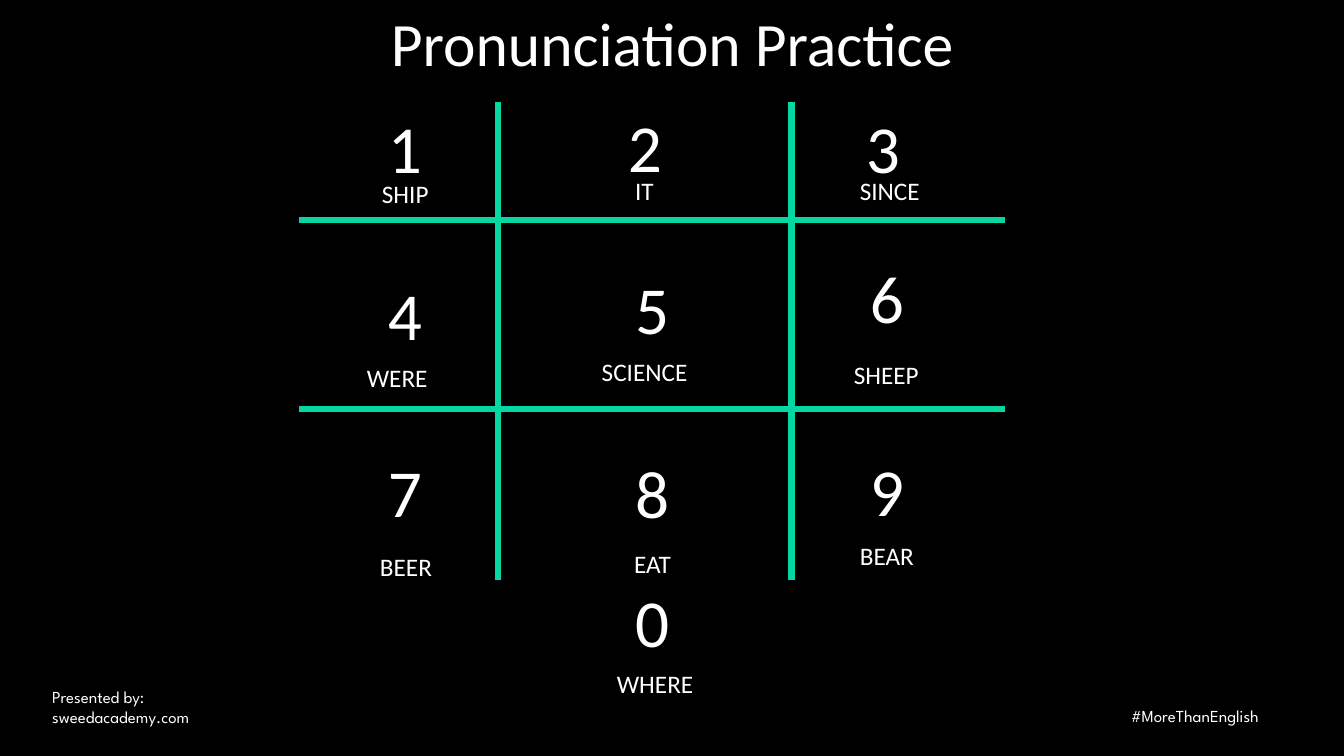
from dataclasses import dataclass

from lxml.etree import SubElement
from pptx import Presentation
from pptx.dml.color import RGBColor
from pptx.enum.shapes import MSO_CONNECTOR as Connector
from pptx.enum.text import MSO_ANCHOR as Anchor, MSO_AUTO_SIZE as AutoSize, PP_ALIGN as Align
from pptx.oxml.ns import qn
from pptx.slide import Slide
from pptx.text.text import TextFrame
from pptx.util import Inches, Pt

COLORS = {"background": "000000", "text": "FFFFFF", "grid": "05D7A2"}
BODY_FONT = "Calibri"
CREDIT_FONT = "League Spartan"
DIGIT_WIDTH, DIGIT_HEIGHT, WORD_HEIGHT = 0.54, 0.91, 0.4
GRID_LEFT, GRID_RIGHT, GRID_TOP, GRID_BOTTOM = 2.97, 9.97, 1.01, 5.75
COLUMN_BORDERS = (4.94, 7.85)
ROW_BORDERS = (2.18, 4.06)


@dataclass(frozen=True)
class Key:
    digit: str
    digit_left: float
    digit_top: float
    word: str
    word_left: float
    word_top: float
    word_width: float


@dataclass(frozen=True)
class Credit:
    text: str
    left: float
    top: float
    width: float
    height: float


KEYS = [
    Key("1", 3.75, 1.01, "SHIP", 3.69, 1.72, 0.67),
    Key("2", 6.13, 1.0, "IT", 6.2, 1.69, 0.39),
    Key("3", 8.49, 1.01, "SINCE", 8.43, 1.69, 0.8),
    Key("4", 3.75, 2.66, "WERE", 3.54, 3.55, 0.81),
    Key("5", 6.2, 2.6, "SCIENCE", 5.87, 3.49, 1.06),
    Key("6", 8.53, 2.49, "SHEEP", 8.37, 3.52, 0.85),
    Key("7", 3.75, 4.42, "BEER", 3.67, 5.42, 0.72),
    Key("8", 6.2, 4.43, "EAT", 6.19, 5.39, 0.57),
    Key("9", 8.53, 4.41, "BEAR", 8.43, 5.31, 0.74),
    Key("0", 6.2, 5.71, "WHERE", 6.02, 6.58, 0.97),
]

CREDITS = [
    Credit("Presented by:\nsweedacademy.com", 0.42, 6.76, 1.74, 0.5),
    Credit("#MoreThanEnglish", 11.12, 6.95, 1.62, 0.3),
]


def write(frame: TextFrame, text: str, *, size: float, font: str = BODY_FONT,
          color: str = COLORS["text"], align: Align = Align.LEFT,
          line_spacing: float = 1.0) -> None:
    frame.text = text
    for paragraph in frame.paragraphs:
        paragraph.alignment = align
        paragraph.line_spacing = line_spacing
        for run in paragraph.runs:
            run.font.size = Pt(size)
            run.font.name = font
            run.font.color.rgb = RGBColor.from_string(color)


def add_label(slide: Slide, text: str, left: float, top: float, width: float,
              height: float, *, size: float, font: str = BODY_FONT) -> None:
    label = slide.shapes.add_textbox(Inches(left), Inches(top), Inches(width), Inches(height))
    label.text_frame.word_wrap = False
    label.text_frame.auto_size = AutoSize.SHAPE_TO_FIT_TEXT
    write(label.text_frame, text, size=size, font=font)


def add_title(slide: Slide, text: str) -> None:
    title = slide.shapes.title
    title.left, title.top = Inches(0.92), Inches(0.03)
    title.width, title.height = Inches(11.5), Inches(0.86)
    title.text_frame.vertical_anchor = Anchor.MIDDLE
    title.text_frame.auto_size = AutoSize.NONE
    write(title.text_frame, text, size=44, align=Align.CENTER, line_spacing=0.9)


def add_border(slide: Slide, x1: float, y1: float, x2: float, y2: float) -> None:
    border = slide.shapes.add_connector(
        Connector.STRAIGHT, Inches(x1), Inches(y1), Inches(x2), Inches(y2))
    border.line.color.rgb = RGBColor.from_string(COLORS["grid"])
    border.line.width = Pt(4.5)
    SubElement(border._element.spPr, qn("a:effectLst"))


def add_key(slide: Slide, key: Key) -> None:
    add_label(slide, key.digit, key.digit_left, key.digit_top,
              DIGIT_WIDTH, DIGIT_HEIGHT, size=48)
    add_label(slide, key.word, key.word_left, key.word_top,
              key.word_width, WORD_HEIGHT, size=18)


def main() -> None:
    presentation = Presentation()
    presentation.slide_width, presentation.slide_height = Inches(13.33), Inches(7.5)
    slide = presentation.slides.add_slide(presentation.slide_layouts[5])
    slide.background.fill.solid()
    slide.background.fill.fore_color.rgb = RGBColor.from_string(COLORS["background"])

    add_title(slide, "Pronunciation Practice")
    for credit in CREDITS:
        add_label(slide, credit.text, credit.left, credit.top, credit.width, credit.height,
                  size=12, font=CREDIT_FONT)
    for x in COLUMN_BORDERS:
        add_border(slide, x, GRID_TOP, x, GRID_BOTTOM)
    for y in ROW_BORDERS:
        add_border(slide, GRID_RIGHT, y, GRID_LEFT, y)
    for key in KEYS:
        add_key(slide, key)

    presentation.save("out.pptx")


if __name__ == "__main__":
    main()
